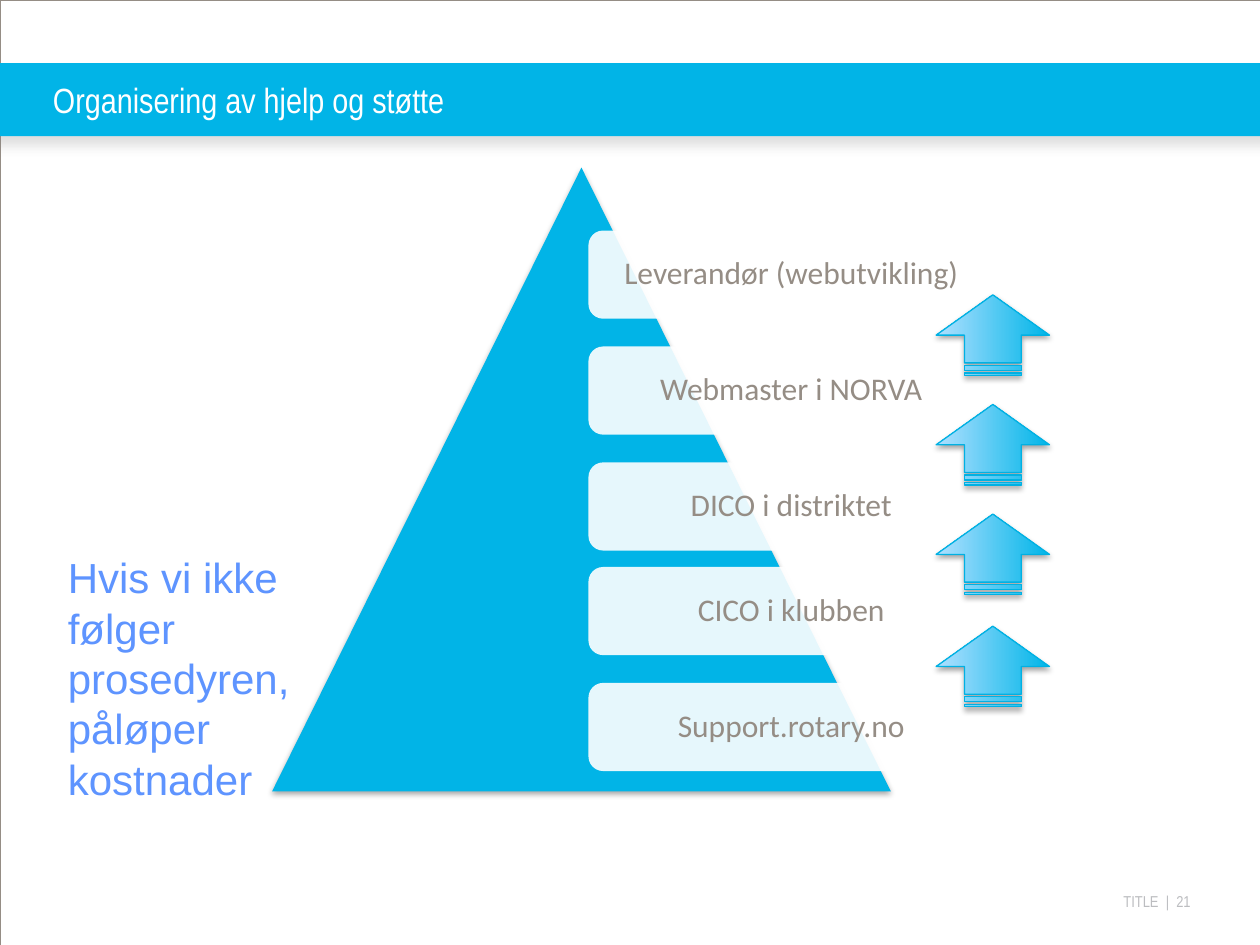
from dataclasses import dataclass

from lxml.etree import SubElement
from pptx import Presentation
from pptx.dml.color import RGBColor
from pptx.enum.shapes import MSO_SHAPE
from pptx.enum.text import MSO_ANCHOR, MSO_AUTO_SIZE, PP_ALIGN
from pptx.oxml.ns import qn
from pptx.util import Inches, Pt


@dataclass(frozen=True)
class Theme:
    band: RGBColor = RGBColor.from_string("01B4E7")
    white: RGBColor = RGBColor.from_string("FFFFFF")
    taupe: RGBColor = RGBColor.from_string("958D85")
    footer: RGBColor = RGBColor.from_string("BCBDC0")
    note: RGBColor = RGBColor.from_string("5E94FF")
    arrow_dark: RGBColor = RGBColor.from_string("00B5E8")
    arrow_light: RGBColor = RGBColor.from_string("B1E0FF")
    arrow_line: RGBColor = RGBColor.from_string("00B1E3")
    title_size: int = 20
    level_size: int = 18
    note_size: int = 24
    footer_size: int = 9


theme = Theme()


def write(box, text, *, size, color, font, align=PP_ALIGN.LEFT,
          anchor=MSO_ANCHOR.TOP, inset=(0, 0), spacing=1.0):
    frame = box.text_frame
    frame.word_wrap = True
    frame.auto_size = MSO_AUTO_SIZE.NONE
    frame.vertical_anchor = anchor
    frame.margin_left = frame.margin_right = Inches(inset[0])
    frame.margin_top = frame.margin_bottom = Inches(inset[1])
    para = frame.paragraphs[0]
    para.alignment = align
    para.line_spacing = spacing
    span = para.add_run()
    span.text = text
    span.font.size = Pt(size)
    span.font.name = font
    span.font.color.rgb = color


def add_form(kind, left, top, width, height, fill=None, shadow=None):
    form = page.shapes.add_shape(kind, Inches(left), Inches(top),
                                 Inches(width), Inches(height))
    form.shadow.inherit = False
    form.line.fill.background()
    if fill is None:
        form.fill.background()
    else:
        form.fill.solid()
        form.fill.fore_color.rgb = fill
    if shadow:
        color, opacity, blur, distance = shadow
        effects = form._element.spPr.find(qn("a:effectLst"))
        outer = SubElement(effects, qn("a:outerShdw"), blurRad=str(Pt(blur)),
                           dist=str(Pt(distance)), dir="5400000", rotWithShape="0")
        tone = SubElement(outer, qn("a:srgbClr"), val=color)
        SubElement(tone, qn("a:alpha"), val=str(opacity * 1000))
    return form


deck = Presentation()
deck.slide_width, deck.slide_height = Inches(10), Inches(7.5)
page = deck.slides.add_slide(deck.slide_layouts[5])
soft_shadow = ("000000", 35, 3.1, 1.8)

# Footer and page frame
footer = page.shapes.add_textbox(Inches(7.7), Inches(7.08), Inches(1.75), Inches(0.15))
write(footer, "TITLE  |  21", size=theme.footer_size, color=theme.footer,
      font="Arial Narrow", align=PP_ALIGN.RIGHT)
border = add_form(MSO_SHAPE.RECTANGLE, 0, 0, 10, 7.5)
border.line.color.rgb = theme.taupe
border.line.width = Pt(0.13)

# Title on its band
add_form(MSO_SHAPE.RECTANGLE, -0.08, 0.5, 10.17, 0.58, theme.band,
         ("808080", 25, 7, 4.8))
title = page.shapes.title
title.left, title.top = Inches(0.42), Inches(0.5)
title.width, title.height = Inches(9.58), Inches(0.58)
write(title, "Organisering av hjelp og støtte", size=theme.title_size,
      color=theme.white, font="Arial Narrow", anchor=MSO_ANCHOR.MIDDLE)
page.shapes._spTree.append(title._element)  # bring in front of the band

# Support pyramid with its levels
add_form(MSO_SHAPE.ISOSCELES_TRIANGLE, 2.16, 1.33, 4.91, 4.95, theme.band, soft_shadow)
levels = [
    ("Leverandør (webutvikling)", 1.83),
    ("Webmaster i NORVA", 2.75),
    ("DICO i distriktet", 3.67),
    ("CICO i klubben", 4.5),
    ("Support.rotary.no", 5.42),
]
for label, top in levels:
    level = add_form(MSO_SHAPE.ROUNDED_RECTANGLE, 4.67, top, 3.22, 0.7, theme.white)
    tone = level._element.spPr.find(qn("a:solidFill"))[0]
    SubElement(tone, qn("a:alpha"), val="90000")
    write(level, label, size=theme.level_size, color=theme.taupe, font="Calibri",
          align=PP_ALIGN.CENTER, anchor=MSO_ANCHOR.MIDDLE, inset=(0.07, 0.07),
          spacing=0.9)

# Note on costs
note = page.shapes.add_textbox(Inches(0.44), Inches(4.33), Inches(2.33), Inches(2.12))
write(note, "Hvis vi ikke følger prosedyren, påløper kostnader",
      size=theme.note_size, color=theme.note, font="Arial", inset=(0.1, 0.05))

# Escalation arrows between levels, from the bottom up
for top in (4.84, 3.95, 3.08, 2.21):
    arrow = add_form(MSO_SHAPE.STRIPED_RIGHT_ARROW, 7.56, top, 0.64, 0.9,
                     shadow=soft_shadow)
    arrow.rotation = 270
    arrow.fill.gradient()
    arrow.fill.gradient_angle = 90
    for stop, color in zip(arrow.fill.gradient_stops,
                           (theme.arrow_dark, theme.arrow_light)):
        stop.color.rgb = color
    arrow.line.color.rgb = theme.arrow_line
    arrow.line.width = Pt(0.75)

deck.save("out.pptx")
